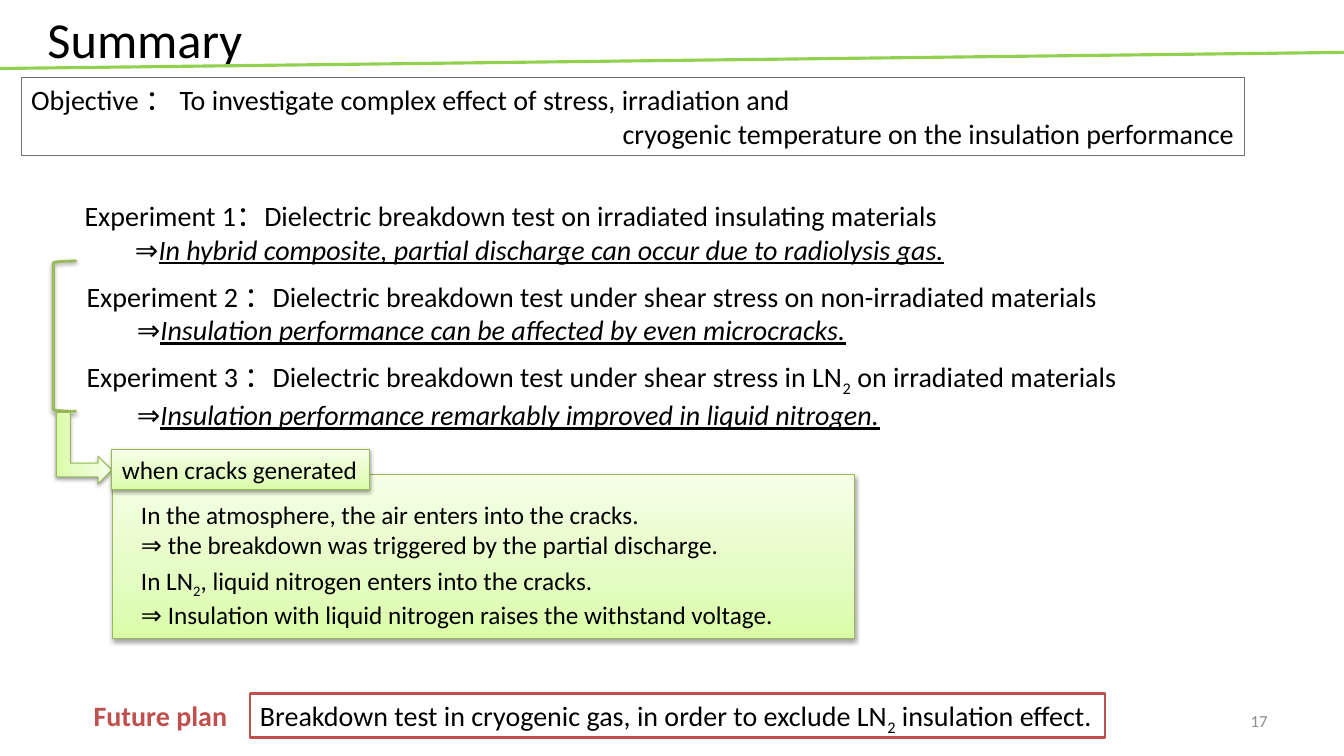
from copy import deepcopy
from dataclasses import dataclass

from lxml.etree import SubElement
from pptx import Presentation
from pptx.dml.color import RGBColor
from pptx.enum.shapes import MSO_CONNECTOR, MSO_SHAPE
from pptx.enum.text import MSO_ANCHOR, PP_ALIGN
from pptx.oxml.ns import qn
from pptx.shapes.autoshape import Shape
from pptx.slide import Slide
from pptx.text.text import TextFrame
from pptx.util import Inches, Pt


@dataclass(frozen=True)
class Theme:
    font: str = "Calibri"
    title_size: float = 36
    body_size: float = 20
    detail_size: float = 18
    number_size: float = 12
    text: str = "000000"
    muted: str = "8C8C8C"
    accent: str = "C0504D"
    white: str = "FFFFFF"
    rule: str = "92D050"
    bracket: str = "9BBB59"
    panel_line: str = "98B955"
    objective_line: str = "707070"
    gradient: tuple[tuple[float, str], ...] = ((0, "DAFDA7"), (0.35, "E4FCC2"), (1, "F5FFE7"))


THEME = Theme()


@dataclass(frozen=True)
class Box:
    left: float
    top: float
    width: float
    height: float


@dataclass(frozen=True)
class Span:
    text: str
    subscript: bool = False
    emphasis: bool = False
    bold: bool = False


@dataclass(frozen=True)
class Line:
    spans: tuple[Span, ...]
    align: PP_ALIGN = PP_ALIGN.LEFT


@dataclass(frozen=True)
class TextBlock:
    box: Box
    lines: tuple[Line, ...]
    size: float = THEME.body_size
    color: str = THEME.text
    anchor: MSO_ANCHOR = MSO_ANCHOR.TOP


def line(*parts: str | Span, align: PP_ALIGN = PP_ALIGN.LEFT) -> Line:
    return Line(tuple(Span(part) if isinstance(part, str) else part for part in parts), align)


def finding(text: str) -> Line:
    return line("\t⇒", Span(text, emphasis=True))


SUB_TWO = Span("2", subscript=True)

EXPERIMENTS = (
    TextBlock(Box(0.74, 1.92, 11.12, 0.77), (
        line("Experiment 1：Dielectric breakdown test on irradiated insulating materials"),
        finding("In hybrid composite, partial discharge can occur due to radiolysis gas."))),
    TextBlock(Box(0.76, 2.72, 12.28, 0.77), (
        line("Experiment 2 ：Dielectric breakdown test under shear stress on non-irradiated materials"),
        finding("Insulation performance can be affected by even microcracks."))),
    TextBlock(Box(0.76, 3.52, 11.91, 0.77), (
        line("Experiment 3 ：Dielectric breakdown test under shear stress in LN", SUB_TWO,
             " on irradiated materials"),
        finding("Insulation performance remarkably improved in liquid nitrogen."))),
)

CRACK_DETAILS = (
    TextBlock(Box(1.3, 4.9, 6.04, 0.71), (
        line("In the atmosphere, the air enters into the cracks."),
        line("⇒ the breakdown was triggered by the partial discharge.")), THEME.detail_size),
    TextBlock(Box(1.3, 5.56, 6.52, 0.71), (
        line("In LN", SUB_TWO, ", liquid nitrogen enters into the cracks."),
        line("⇒ Insulation with liquid nitrogen raises the withstand voltage.")), THEME.detail_size),
)

FUTURE_LABEL = TextBlock(
    Box(0.83, 6.88, 1.72, 0.44), (line(Span("Future plan", bold=True)),), color=THEME.accent)
PAGE_NUMBER = TextBlock(
    Box(9.56, 6.95, 3.11, 0.4), (line("17", align=PP_ALIGN.RIGHT),),
    THEME.number_size, THEME.muted, MSO_ANCHOR.MIDDLE)

OBJECTIVE = TextBlock(Box(0.21, 0.77, 12.13, 0.77), (
    line("Objective ： To investigate complex effect of stress, irradiation and"),
    line("cryogenic temperature on the insulation performance", align=PP_ALIGN.RIGHT)))
FUTURE_PLAN = TextBlock(Box(2.48, 6.88, 8.48, 0.44), (
    line("Breakdown test in cryogenic gas, in order to exclude LN", SUB_TWO, " insulation effect."),))
CRACK_LABEL = TextBlock(
    Box(1.11, 4.46, 2.56, 0.4), (line("when cracks generated"),), THEME.detail_size)
TITLE = TextBlock(
    Box(0.37, 0, 12.67, 0.77), (line("Summary"),), THEME.title_size, anchor=MSO_ANCHOR.MIDDLE)


def lengths(box: Box) -> tuple[Inches, Inches, Inches, Inches]:
    return Inches(box.left), Inches(box.top), Inches(box.width), Inches(box.height)


def write_text(frame: TextFrame, block: TextBlock, wrap: bool = True) -> None:
    frame.word_wrap = wrap
    frame.vertical_anchor = block.anchor
    for index, text_line in enumerate(block.lines):
        paragraph = frame.add_paragraph() if index else frame.paragraphs[0]
        paragraph.alignment = text_line.align
        for span in text_line.spans:
            run = paragraph.add_run()
            run.text = span.text
            run.font.name = THEME.font
            run.font.size = Pt(block.size)
            run.font.color.rgb = RGBColor.from_string(block.color)
            if span.bold:
                run.font.bold = True
            if span.emphasis:
                run.font.italic = True
                run.font.underline = True
            if span.subscript:
                run._r.get_or_add_rPr().set("baseline", "-25000")


def add_text(slide: Slide, block: TextBlock) -> None:
    write_text(slide.shapes.add_textbox(*lengths(block.box)).text_frame, block)


def add_outline(slide: Slide, kind: MSO_SHAPE, box: Box, color: str, width: float) -> Shape:
    shape = slide.shapes.add_shape(kind, *lengths(box))
    shape.shadow.inherit = False
    shape.fill.background()
    shape.line.color.rgb = RGBColor.from_string(color)
    shape.line.width = Pt(width)
    return shape


def add_shadow(shape: Shape) -> None:
    effects = shape._element.spPr.find(qn("a:effectLst"))
    shadow = SubElement(effects, qn("a:outerShdw"), blurRad=str(Pt(3.1)), dist=str(Pt(1.6)),
                        dir="5400000", rotWithShape="0")
    color = SubElement(shadow, qn("a:srgbClr"), val="000000")
    SubElement(color, qn("a:alpha"), val="38000")


def add_panel(slide: Slide, kind: MSO_SHAPE, box: Box) -> Shape:
    shape = add_outline(slide, kind, box, THEME.panel_line, 0.75)
    shape.fill.gradient()
    shape.fill.gradient_angle = 90
    stop_list = shape._element.spPr.find(qn("a:gradFill")).find(qn("a:gsLst"))
    stop_list.insert(1, deepcopy(stop_list[0]))
    for stop, (position, color) in zip(shape.fill.gradient_stops, THEME.gradient):
        stop.position = position
        stop.color.rgb = RGBColor.from_string(color)
    add_shadow(shape)
    return shape


def add_title(slide: Slide) -> None:
    title = slide.shapes.title
    title.left, title.top, title.width, title.height = lengths(TITLE.box)
    write_text(title.text_frame, TITLE)


def add_rule(slide: Slide) -> None:
    rule = slide.shapes.add_connector(
        MSO_CONNECTOR.STRAIGHT, Inches(-0.03), Inches(0.68), Inches(13.33), Inches(0.52))
    rule.line.color.rgb = RGBColor.from_string(THEME.rule)
    rule.line.width = Pt(2.25)
    SubElement(rule._element.spPr, qn("a:effectLst"))


def main() -> None:
    presentation = Presentation()
    presentation.slide_width, presentation.slide_height = Inches(13.33), Inches(7.5)
    slide = presentation.slides.add_slide(presentation.slide_layouts[5])

    add_rule(slide)
    add_title(slide)
    objective = add_outline(
        slide, MSO_SHAPE.RECTANGLE, OBJECTIVE.box, THEME.objective_line, 0.75)
    write_text(objective.text_frame, OBJECTIVE)

    add_panel(slide, MSO_SHAPE.RECTANGLE, Box(1.12, 4.71, 7.36, 1.62))
    bracket = add_outline(
        slide, MSO_SHAPE.LEFT_BRACKET, Box(0.53, 2.59, 0.23, 1.49), THEME.bracket, 2)
    add_shadow(bracket)
    arrow = add_panel(slide, MSO_SHAPE.BENT_UP_ARROW, Box(0.48, 4.17, 0.71, 0.55))
    arrow.rotation = 90
    crack_label = add_panel(slide, MSO_SHAPE.RECTANGLE, CRACK_LABEL.box)
    write_text(crack_label.text_frame, CRACK_LABEL, wrap=False)

    future_plan = add_outline(slide, MSO_SHAPE.RECTANGLE, FUTURE_PLAN.box, THEME.accent, 2)
    future_plan.fill.solid()
    future_plan.fill.fore_color.rgb = RGBColor.from_string(THEME.white)
    write_text(future_plan.text_frame, FUTURE_PLAN)

    for block in (*EXPERIMENTS, *CRACK_DETAILS, FUTURE_LABEL, PAGE_NUMBER):
        add_text(slide, block)
    presentation.save("out.pptx")


if __name__ == "__main__":
    main()
